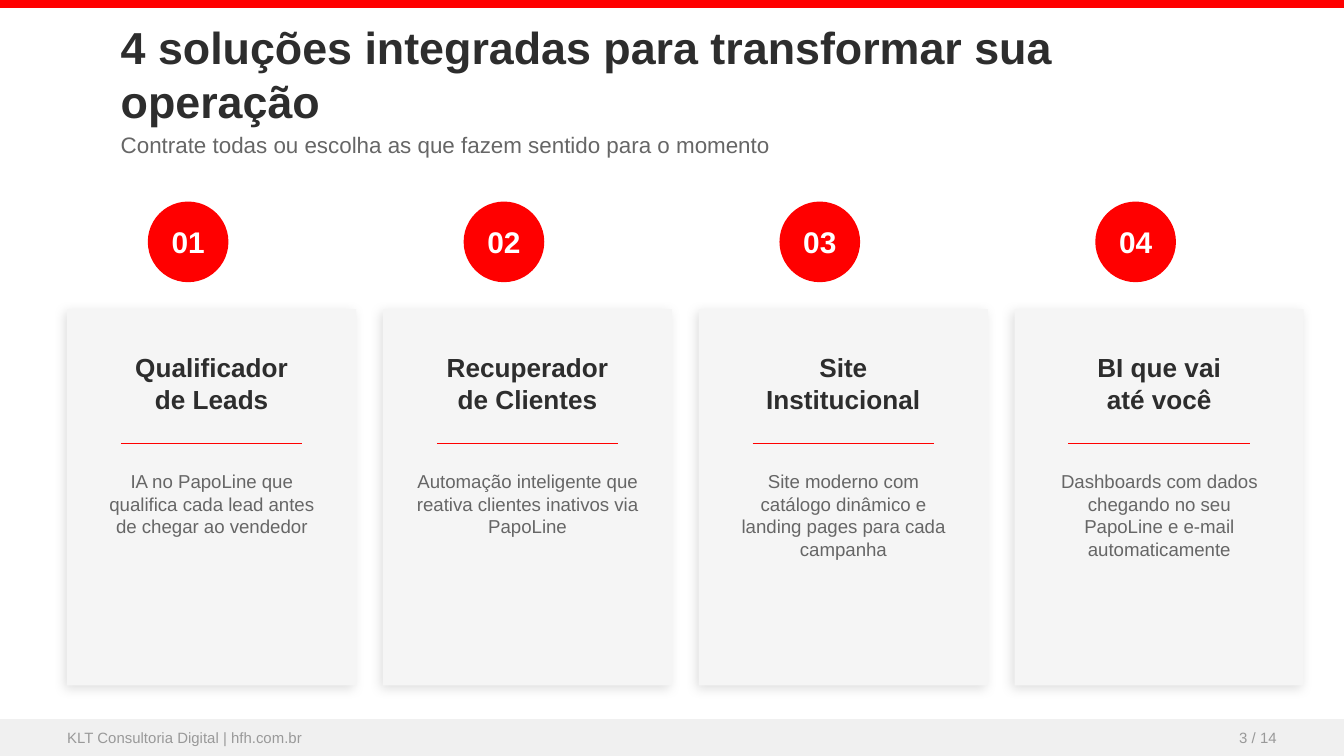
from dataclasses import dataclass

from lxml.etree import SubElement
from pptx import Presentation
from pptx.dml.color import RGBColor
from pptx.enum.shapes import MSO_CONNECTOR, MSO_SHAPE
from pptx.enum.text import MSO_ANCHOR, PP_ALIGN
from pptx.oxml.ns import qn
from pptx.util import Inches, Pt

UNIT = 0.05  # grid step in inches: 200 columns across the slide
COLORS = {
    "red": "FF0000", "dark": "2D2D2D", "gray": "666666", "pale": "999999",
    "card": "F5F5F5", "foot": "F0F0F0", "white": "FFFFFF", "black": "000000",
}
FORMATS = {
    "title": {"size": Pt(24), "bold": True},
    "lead": {"size": Pt(12), "bold": False},
    "badge": {"size": Pt(16), "bold": True},
    "head": {"size": Pt(14), "bold": True},
    "body": {"size": Pt(10), "bold": False},
    "foot": {"size": Pt(8), "bold": False},
}
LEFT, MID, RIGHT = PP_ALIGN.LEFT, PP_ALIGN.CENTER, PP_ALIGN.RIGHT


@dataclass
class Box:
    """An area in grid columns and rows."""
    col: float
    row: float
    wide: float
    high: float

    def place(self) -> tuple:
        return tuple(span(n) for n in (self.col, self.row, self.wide, self.high))


@dataclass
class Card:
    head: tuple[str, str]
    body: str


def span(count: float) -> int:
    return Inches(count * UNIT)


def tint(name: str) -> RGBColor:
    return RGBColor.from_string(COLORS[name])


def draw_shape(slide, kind, box: Box, fill: str):
    shape = slide.shapes.add_shape(kind, *box.place())
    shape.shadow.inherit = False
    shape.fill.solid()
    shape.fill.fore_color.rgb = tint(fill)
    shape.line.fill.background()
    return shape


def draw_text(slide, box: Box, lines: tuple, style: str, color: str,
              align=LEFT, anchor=MSO_ANCHOR.MIDDLE, inset: bool = True) -> None:
    frame = slide.shapes.add_textbox(*box.place()).text_frame
    frame.word_wrap = True
    frame.vertical_anchor = anchor
    if not inset:
        for side in ("left", "top", "right", "bottom"):
            setattr(frame, f"margin_{side}", 0)
    frame.text = "\n".join(lines)
    for para in frame.paragraphs:
        para.alignment = align
        font = para.runs[0].font
        for key, value in {"name": "Arial", **FORMATS[style]}.items():
            setattr(font, key, value)
        font.color.rgb = tint(color)


def draw_line(slide, col: float, row: float, wide: float) -> None:
    line = slide.shapes.add_connector(
        MSO_CONNECTOR.STRAIGHT, span(col), span(row), span(col + wide), span(row))
    line.line.color.rgb = tint("red")
    line.line.width = Pt(1)
    SubElement(line._element.spPr, qn("a:effectLst"))


def add_shadow(shape) -> None:
    effects = shape._element.spPr.find(qn("a:effectLst"))
    outer = SubElement(effects, qn("a:outerShdw"), blurRad=str(Pt(6)),
                       dist=str(Pt(2)), dir=str(135 * 60000), rotWithShape="0")
    color = SubElement(outer, qn("a:srgbClr"), val=COLORS["black"])
    SubElement(color, qn("a:alpha"), val="12000")


def draw_card(slide, index: int, card: Card) -> None:
    col = 10 + 47 * index  # 43 columns wide plus a gap of 4
    badge = Box(col + 12, 30, 12, 12)
    draw_shape(slide, MSO_SHAPE.OVAL, badge, "red")
    draw_text(slide, badge, (f"{index + 1:02}",), "badge", "white", MID)
    add_shadow(draw_shape(slide, MSO_SHAPE.RECTANGLE, Box(col, 46, 43, 56), "card"))
    draw_text(slide, Box(col + 3, 49, 37, 16), card.head, "head", "dark", MID)
    draw_line(slide, col + 8, 66, 27)
    draw_text(slide, Box(col + 3, 69, 37, 30), (card.body,), "body", "gray",
              MID, MSO_ANCHOR.TOP)


CARDS = [
    Card(("Qualificador", "de Leads"),
         "IA no PapoLine que qualifica cada lead antes de chegar ao vendedor"),
    Card(("Recuperador", "de Clientes"),
         "Automação inteligente que reativa clientes inativos via PapoLine"),
    Card(("Site", "Institucional"),
         "Site moderno com catálogo dinâmico e landing pages para cada campanha"),
    Card(("BI que vai", "até você"),
         "Dashboards com dados chegando no seu PapoLine e e-mail automaticamente"),
]


def main() -> None:
    deck = Presentation()
    deck.slide_width = Inches(10)
    deck.slide_height = deck.slide_width * 9 // 16
    slide = deck.slides.add_slide(deck.slide_layouts[6])
    slide.background.fill.solid()
    slide.background.fill.fore_color.rgb = tint("white")

    # Top bar and headings
    draw_shape(slide, MSO_SHAPE.RECTANGLE, Box(0, 0, 200, 1.2), "red")
    draw_text(slide, Box(16, 6, 168, 10),
              ("4 soluções integradas para transformar sua operação",), "title", "dark")
    draw_text(slide, Box(16, 18, 168, 7),
              ("Contrate todas ou escolha as que fazem sentido para o momento",),
              "lead", "gray")

    # Solution cards
    for index, card in enumerate(CARDS):
        draw_card(slide, index, card)

    # Footer
    draw_shape(slide, MSO_SHAPE.RECTANGLE, Box(0, 107, 200, 5.5), "foot")
    draw_text(slide, Box(10, 107, 100, 5.5), ("KLT Consultoria Digital | hfh.com.br",),
              "foot", "pale", inset=False)
    draw_text(slide, Box(150, 107, 40, 5.5), ("3 / 14",), "foot", "pale", RIGHT,
              inset=False)
    deck.save("out.pptx")


if __name__ == "__main__":
    main()
